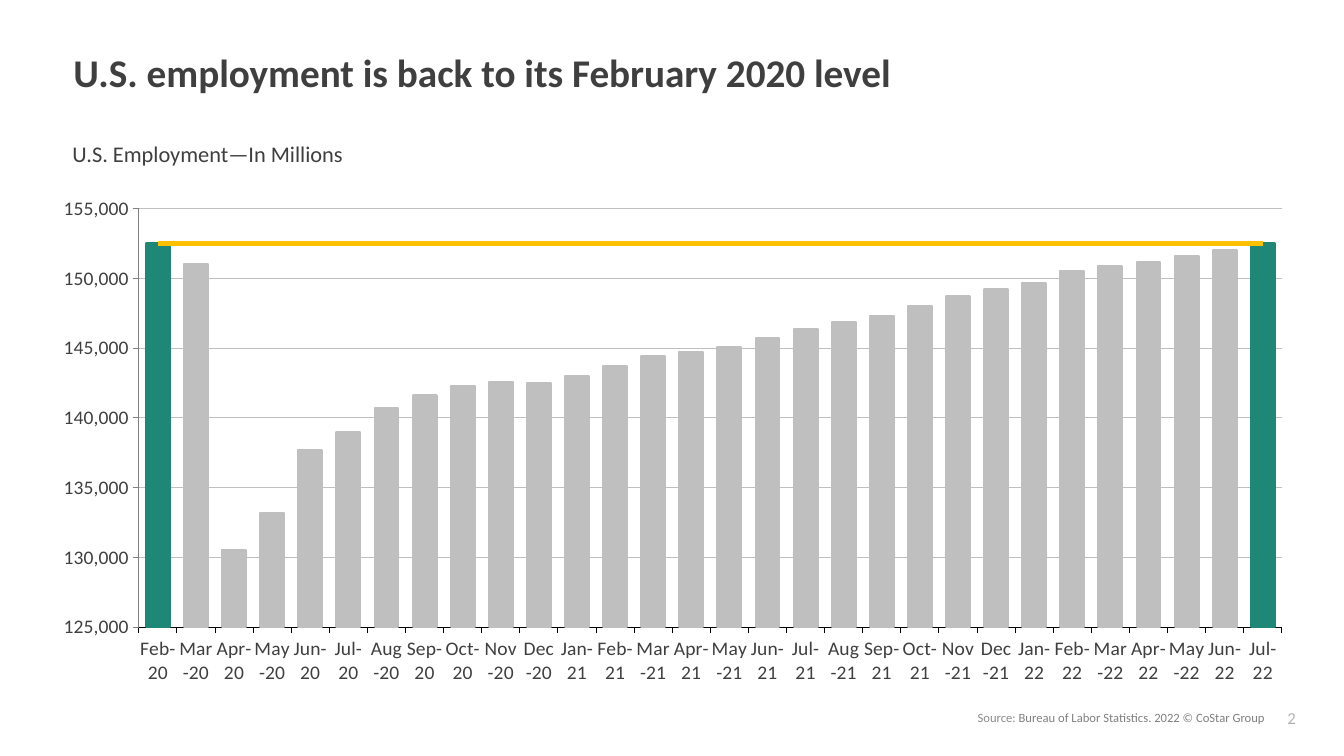
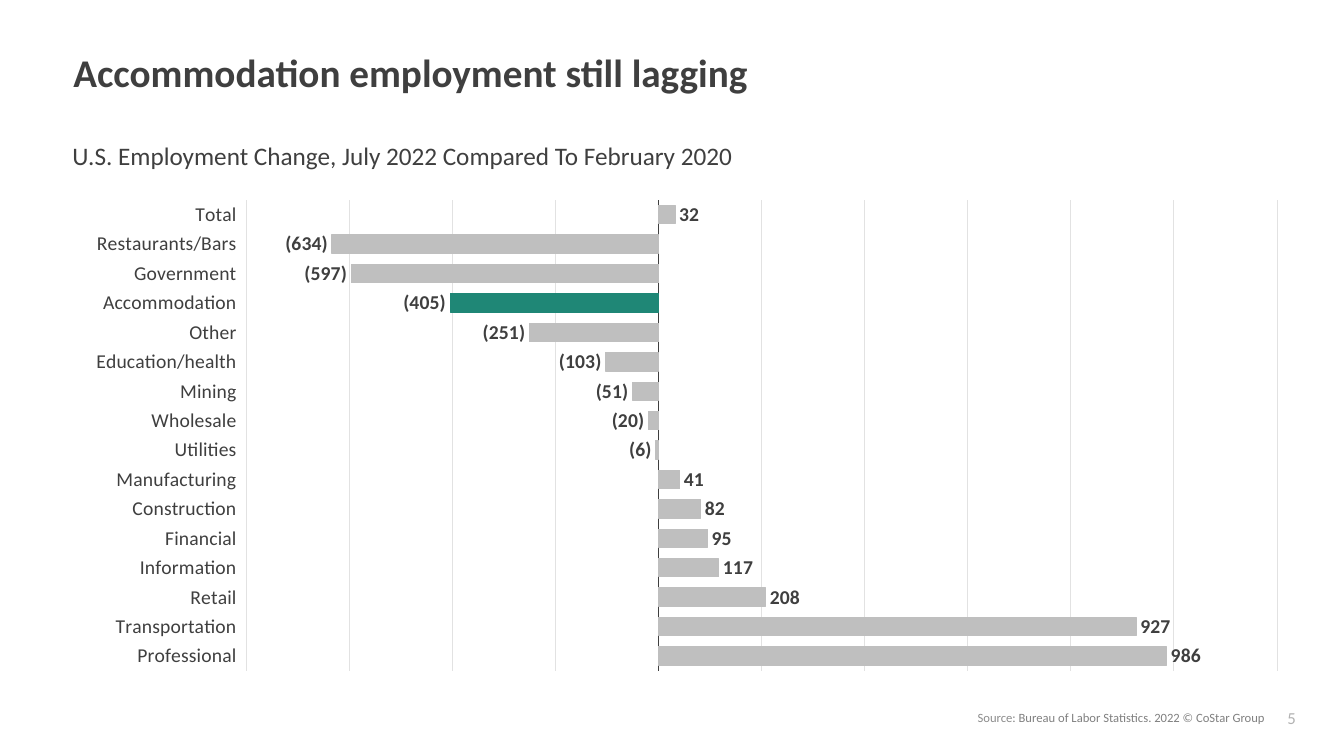
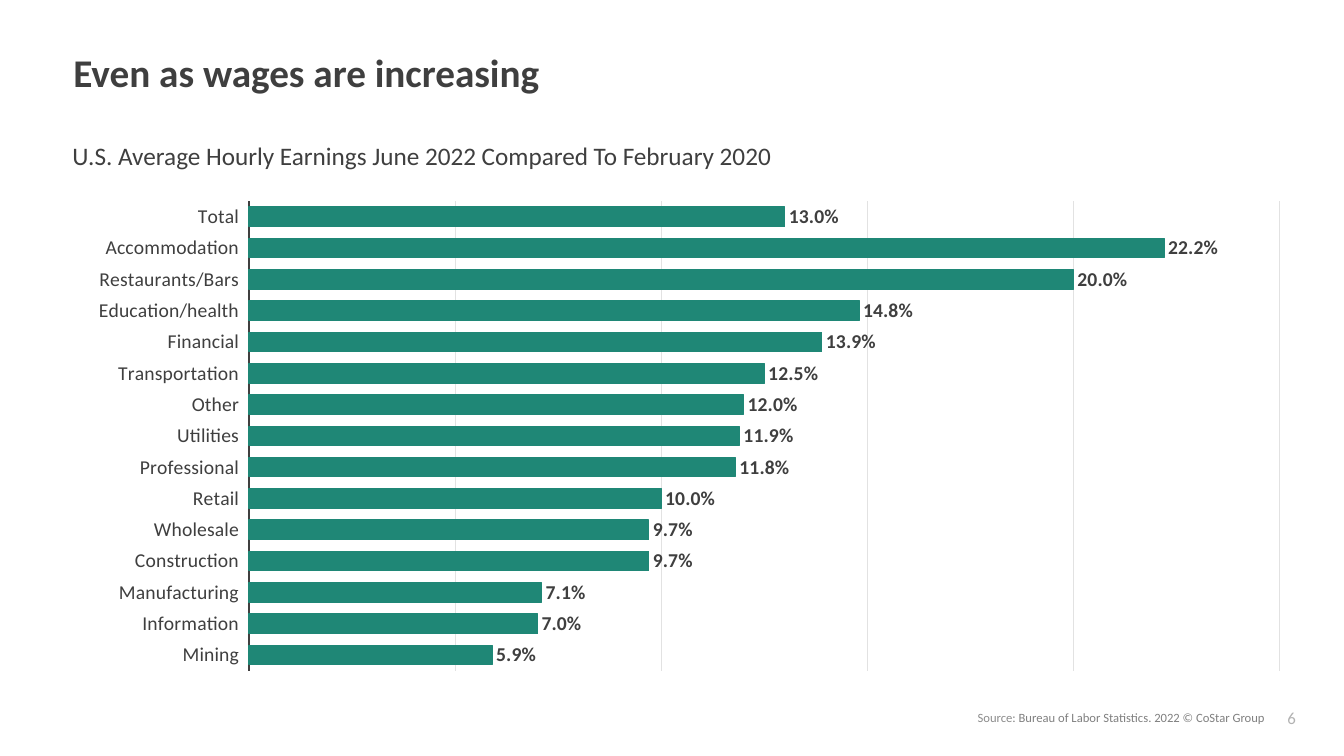
import copy
import pptx
import pptx.chart.data
import pptx.dml.color
import pptx.enum.chart
import pptx.enum.text
import pptx.oxml
import pptx.util

Inches, Pt = pptx.util.Inches, pptx.util.Pt
RGB = pptx.dml.color.RGBColor
XL = pptx.enum.chart
ALIGN = pptx.enum.text.PP_ALIGN
ANCHOR = pptx.enum.text.MSO_ANCHOR

# Shared look
FONT = "Calibri"
DARK = RGB(0x3F, 0x3F, 0x3F)
GREEN = RGB(0x1F, 0x87, 0x76)
SILVER = RGB(0xBF, 0xBF, 0xBF)
GOLD = RGB(0xFF, 0xC0, 0x00)
PALE = RGB(0xE2, 0xE2, 0xE2)
BLACK = RGB(0, 0, 0)
GREY = RGB(0x80, 0x80, 0x80)
MIST = RGB(0x8C, 0x8C, 0x8C)
ASH = RGB(0xB2, 0xB2, 0xB2)
NS = 'xmlns:c="http://schemas.openxmlformats.org/drawingml/2006/chart"'

# Data
months = "Jan Feb Mar Apr May Jun Jul Aug Sep Oct Nov Dec".split()
dates = [f"{months[n % 12]}-{20 + n // 12}" for n in range(1, 31)]
jobs = [152500, 151000, 130500, 133200, 137700, 139000, 140700, 141600,
        142300, 142600, 142500, 143000, 143700, 144400, 144700, 145100,
        145700, 146400, 146900, 147300, 148000, 148700, 149200, 149700,
        150500, 150900, 151200, 151600, 152000, 152500]
change = {
    "Professional": 986, "Transportation": 927, "Retail": 208,
    "Information": 117, "Financial": 95, "Construction": 82,
    "Manufacturing": 41, "Utilities": -6, "Wholesale": -20, "Mining": -51,
    "Education/health": -103, "Other": -251, "Accommodation": -405,
    "Government": -597, "Restaurants/Bars": -634, "Total": 32}
wages = {
    "Mining": 0.059, "Information": 0.07, "Manufacturing": 0.071,
    "Construction": 0.097, "Wholesale": 0.097, "Retail": 0.1,
    "Professional": 0.118, "Utilities": 0.119, "Other": 0.12,
    "Transportation": 0.125, "Financial": 0.139, "Education/health": 0.148,
    "Restaurants/Bars": 0.2, "Accommodation": 0.222, "Total": 0.13}

pages = [
    dict(num="2", title="U.S. employment is back to its February 2020 level",
         sub="U.S. Employment—In Millions", size=16, left=0.63,
         cats=dates, vals=jobs, level=152500, fmt="#,##0",
         scale=(125000, 155000, 5000), color=SILVER, marked=(0, 29),
         edge=1.5, plot=(0.057, 0.057, 0.923, 0.845)),
    dict(num="5", title="Accommodation employment still lagging",
         sub="U.S. Employment Change, July 2022 Compared To February 2020",
         size=18, left=0.62, cats=list(change), vals=list(change.values()),
         level=None, fmt="#,##0_);(#,##0)", scale=(-800, 1200, 200),
         color=SILVER, marked=(12,), edge=0.75,
         plot=(0.148, 0.039, 0.829, 0.934)),
    dict(num="6", title="Even as wages are increasing",
         sub="U.S. Average Hourly Earnings June 2022 Compared To February 2020",
         size=18, left=0.62, cats=list(wages), vals=list(wages.values()),
         level=None, fmt="0.0%", scale=(0, 0.25, 0.05),
         color=GREEN, marked=(), edge=0.75,
         plot=(0.15, 0.041, 0.829, 0.932)),
]


def style(font, size, color, bold=False):
    font.name, font.size, font.bold = FONT, Pt(size), bold
    font.color.rgb = color


def write(slide, box, parts, size, bold=False):
    """Add a one-paragraph text box; parts are (text, colour) pairs."""
    frame = slide.shapes.add_textbox(*map(Inches, box)).text_frame
    frame.word_wrap = True
    para = frame.paragraphs[0]
    for text, color in parts:
        run = para.add_run()
        run.text = text
        style(run.font, size, color, bold)
    return frame


deck = pptx.Presentation()
deck.slide_width, deck.slide_height = Inches(13.33), Inches(7.5)

for page in pages:
    slide = deck.slides.add_slide(deck.slide_layouts[6])
    upright = page["level"] is not None

    # Title, subtitle, source and page number
    head = write(slide, (0.63, 0.52, 10.7, 0.49), [(page["title"], DARK)],
                 28, True)
    head.vertical_anchor = ANCHOR.MIDDLE
    head.paragraphs[0].line_spacing = Pt(26.7)
    write(slide, (0.62, 1.34, 11.21, 0.36), [(page["sub"], DARK)],
          page["size"])
    foot = write(slide, (0.53, 6.99, 12.11, 0.25), [
        ("Source", MIST),
        (": Bureau of Labor Statistics. 2022 © CoStar Group", GREY)], 9)
    foot.paragraphs[0].alignment = ALIGN.RIGHT
    write(slide, (12.67, 6.97, 0.66, 0.3), [(page["num"], ASH)], 12)

    # Chart
    data = pptx.chart.data.CategoryChartData(number_format=page["fmt"])
    data.categories = page["cats"]
    data.add_series("Series 1", page["vals"])
    if upright:
        data.add_series("Series 2", [page["level"]] * len(page["cats"]))
    kind = XL.XL_CHART_TYPE
    chart = slide.shapes.add_chart(
        kind.COLUMN_CLUSTERED if upright else kind.BAR_CLUSTERED,
        Inches(page["left"]), Inches(1.79), Inches(12.33), Inches(5),
        data).chart
    chart.has_legend = chart.has_title = False
    style(chart.font, 14, DARK)

    # Bars
    plot = chart.plots[0]
    plot.gap_width = 60
    plot.vary_by_categories = False
    bars = plot.series[0]
    bars.invert_if_negative = False
    paint = [(bars.format, page["color"])]
    paint += [(bars.points[n].format, GREEN) for n in page["marked"]]
    for form, color in paint:
        form.fill.solid()
        form.fill.fore_color.rgb = color
        form.line.color.rgb = color
        form.line.width = Pt(page["edge"])

    # Axes
    tick = XL.XL_TICK_MARK
    cat, val = chart.category_axis, chart.value_axis
    cat.tick_label_position = XL.XL_TICK_LABEL_POSITION.LOW
    cat.major_tick_mark = tick.OUTSIDE if upright else tick.NONE
    cat.has_major_gridlines = False
    cat.format.line.color.rgb = BLACK if upright else DARK
    cat.format.line.width = Pt(0.75)
    style(cat.tick_labels.font, 14, DARK)
    cat.tick_labels.font._element.getparent().getparent().getparent() \
        .bodyPr.set("rot", "0")
    val.minimum_scale, val.maximum_scale, val.major_unit = page["scale"]
    val.has_major_gridlines = True
    grid = val.major_gridlines.format.line
    grid.color.rgb = SILVER if upright else PALE
    grid.width = Pt(0.75)
    val.visible = upright
    if upright:
        val.major_tick_mark = tick.OUTSIDE
        val.format.line.color.rgb = GREY
        val.format.line.width = Pt(0.75)
        style(val.tick_labels.font, 14, DARK)
        val.tick_labels.number_format = page["fmt"]
        val.tick_labels.number_format_is_linked = False
    else:
        plot.has_data_labels = True
        labels = plot.data_labels
        labels.show_value = True
        labels.position = XL.XL_LABEL_POSITION.OUTSIDE_END
        labels.number_format = page["fmt"]
        labels.number_format_is_linked = False
        style(labels.font, 14, DARK, True)

    # Fixed plot area
    area = chart._chartSpace.chart.plotArea
    for old in area.xpath("c:layout"):
        area.remove(old)
    spots = "".join(f'<c:{tag} val="{num}"/>'
                    for tag, num in zip("xywh", page["plot"]))
    area.insert(0, pptx.oxml.parse_xml(
        f'<c:layout {NS}><c:manualLayout><c:layoutTarget val="inner"/>'
        f'<c:xMode val="edge"/><c:yMode val="edge"/>{spots}'
        '</c:manualLayout></c:layout>'))

    # Second series becomes a level line
    if upright:
        bar = area.xpath("c:barChart")[0]
        ser = bar.xpath("c:ser")[1]
        for flag in ser.xpath("c:invertIfNegative"):
            ser.remove(flag)
        line = pptx.oxml.parse_xml(
            f'<c:lineChart {NS}><c:grouping val="standard"/>'
            '<c:varyColors val="0"/><c:marker val="1"/></c:lineChart>')
        line.insert(2, ser)
        for axis in bar.xpath("c:axId"):
            line.append(copy.deepcopy(axis))
        bar.addnext(line)
        level = chart.plots[1].series[0]
        level.smooth = False
        level.marker.style = XL.XL_MARKER_STYLE.NONE
        level.format.line.color.rgb = GOLD
        level.format.line.width = Pt(3.75)

deck.save("out.pptx")
